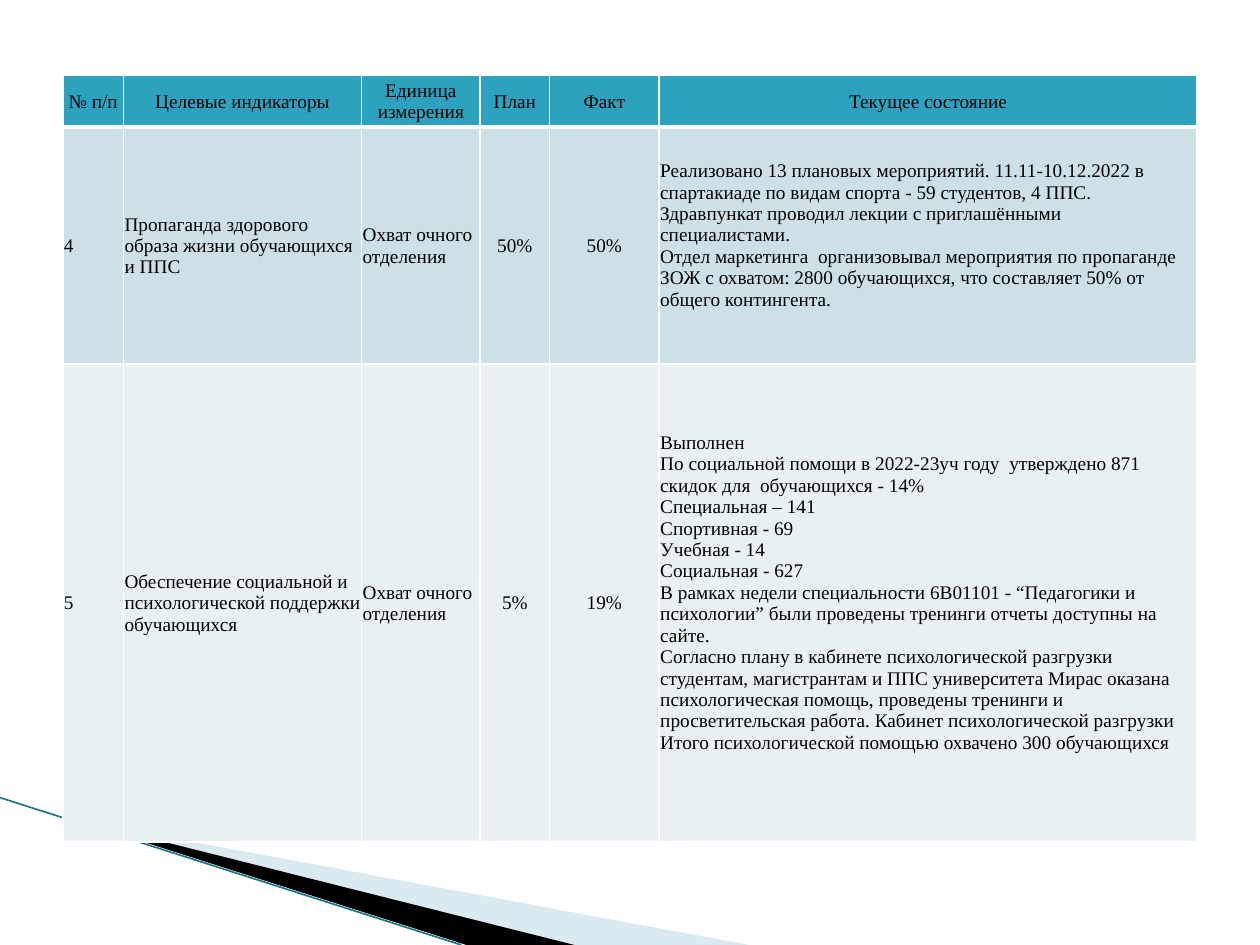
from dataclasses import dataclass

import pptx
import pptx.dml.color
import pptx.enum.text
import pptx.oxml
import pptx.oxml.ns
import pptx.util
from lxml import etree

Cm, Pt = pptx.util.Cm, pptx.util.Pt
RGB = pptx.dml.color.RGBColor.from_string
ALIGN = pptx.enum.text.PP_ALIGN
MIDDLE = pptx.enum.text.MSO_ANCHOR.MIDDLE
qn = pptx.oxml.ns.qn


@dataclass(frozen=True)
class Theme:
    font: str = "Times New Roman"
    size: float = 11
    text: str = "000000"
    border: str = "FFFFFF"
    header: str = "2DA2BF"
    bands: tuple = ("CDE0E8", "E8F0F4")
    pale_wedge: str = "A0CBDC"
    dark_wedge: str = "000000"
    stripe: str = "1D768B"


THEME = Theme()

COLUMNS = (1.22, 4.8, 2.39, 1.4, 2.21, 10.84)
ROWS = (1.04, 4.78, 9.63)
COLUMN_ALIGN = (ALIGN.JUSTIFY, ALIGN.LEFT, ALIGN.LEFT, ALIGN.CENTER, ALIGN.CENTER, ALIGN.LEFT)
STATE_COLUMN = 5

HEADINGS = ("№ п/п", "Целевые индикаторы", "Единица измерения", "План", "Факт",
            "Текущее состояние")
INDICATORS = (
    ("4", "Пропаганда здорового образа жизни обучающихся и ППС",
     "Охват очного отделения", "50%", "50%",
     "Реализовано 13 плановых мероприятий. 11.11-10.12.2022 в спартакиаде по видам "
     "спорта - 59 студентов, 4 ППС. Здравпункат проводил лекции с приглашёнными "
     "специалистами.\n"
     "Отдел маркетинга  организовывал мероприятия по пропаганде ЗОЖ с охватом: "
     "2800 обучающихся, что составляет 50% от общего контингента."),
    ("5", "Обеспечение социальной и психологической поддержки обучающихся",
     "Охват очного отделения", "5%", "19%",
     "Выполнен\n"
     "По социальной помощи в 2022-23уч году  утверждено 871 скидок для  обучающихся - 14%\n"
     "Специальная – 141\n"
     "Спортивная - 69\n"
     "Учебная - 14\n"
     "Социальная - 627\n"
     "В рамках недели специальности 6В01101 - “Педагогики и психологии” были "
     "проведены тренинги отчеты доступны на сайте.\n"
     "Согласно плану в кабинете психологической разгрузки студентам, магистрантам и "
     "ППС университета Мирас оказана психологическая помощь, проведены тренинги и "
     "просветительская работа. Кабинет психологической разгрузки\n"
     "Итого психологической помощью охвачено 300 обучающихся"),
)


def write_text(tf, text, align=ALIGN.LEFT, size=THEME.size, color=THEME.text):
    """Write each line of text as a paragraph of the frame."""
    for i, line in enumerate(text.split("\n")):
        p = tf.paragraphs[0] if i == 0 else tf.add_paragraph()
        p.alignment = align
        r = p.add_run()
        r.text = line
        r.font.name = THEME.font
        r.font.size = Pt(size)
        r.font.color.rgb = RGB(color)


def add_borders(cell, **widths):
    """Draw the cell's sides; widths in points by side: L, R, T, B."""
    tcPr = cell._tc.get_or_add_tcPr()
    for side in "LRTB":
        ln = etree.SubElement(tcPr, qn(f"a:ln{side}"), w=str(Pt(widths.get(side, 1))))
        fill = etree.SubElement(ln, qn("a:solidFill"))
        etree.SubElement(fill, qn("a:srgbClr"), val=THEME.border)


def format_cell(cell, text, fill, align, bottom_inset=0, **borders):
    cell.margin_left = cell.margin_right = cell.margin_top = Cm(0.02)
    cell.margin_bottom = Cm(bottom_inset)
    cell.vertical_anchor = MIDDLE
    add_borders(cell, **borders)
    cell.fill.solid()
    cell.fill.fore_color.rgb = RGB(fill)
    write_text(cell.text_frame, text, align=align)


def add_indicator_table(slide, left, top):
    table = slide.shapes.add_table(len(ROWS), len(COLUMNS), Cm(left), Cm(top),
                                   Cm(sum(COLUMNS)), Cm(sum(ROWS))).table
    for column, width in zip(table.columns, COLUMNS):
        column.width = Cm(width)
    for row, height in zip(table.rows, ROWS):
        row.height = Cm(height)
    for c, heading in enumerate(HEADINGS):
        format_cell(table.cell(0, c), heading, THEME.header, ALIGN.CENTER, B=3)
    for r, (values, band) in enumerate(zip(INDICATORS, THEME.bands), start=1):
        for c, value in enumerate(values):
            format_cell(table.cell(r, c), value, band, COLUMN_ALIGN[c],
                        bottom_inset=0.43 if c == STATE_COLUMN else 0,
                        T=3 if r == 1 else 1)


def add_wedge(slide, points, color, opacity=100):
    builder = slide.shapes.build_freeform(*points[0], scale=1.0)
    builder.add_line_segments(points[1:], close=True)
    sp = builder.convert_to_shape()
    sp.shadow.inherit = False
    sp.line.fill.background()
    sp.fill.solid()
    sp.fill.fore_color.rgb = RGB(color)
    if opacity < 100:
        clr = sp._element.spPr.find(f"{qn('a:solidFill')}/{qn('a:srgbClr')}")
        etree.SubElement(clr, qn("a:alpha"), val=str(opacity * 1000))


def add_corner_decor(slide, left, top, height):
    """Two wedges and a stripe running down to the bottom of the box."""
    def at(x, y):
        return Cm(left + x), Cm(top + y)

    add_wedge(slide, [at(1.4, 0.43), at(15.1, height), at(11.58, height)],
              THEME.pale_wedge, opacity=40)
    add_wedge(slide, [at(1.35, 0.4), at(11.58, height), at(9.4, height)],
              THEME.dark_wedge)
    line = slide.shapes.add_connector(pptx.enum.shapes.MSO_CONNECTOR.STRAIGHT,
                                      *at(0, 0), *at(9.3, height))
    line.line.color.rgb = RGB(THEME.stripe)
    line.line.width = Pt(0.95)
    etree.SubElement(line._element.spPr, qn("a:effectLst"))


def main():
    prs = pptx.Presentation()
    prs.slide_width, prs.slide_height = Cm(25.4), Cm(19.05)
    slide = prs.slides.add_slide(prs.slide_layouts[6])
    add_corner_decor(slide, left=0, top=16.08, height=2.97)
    add_indicator_table(slide, left=1.27, top=1.52)
    prs.save("out.pptx")


if __name__ == "__main__":
    import pptx.enum.shapes
    main()
